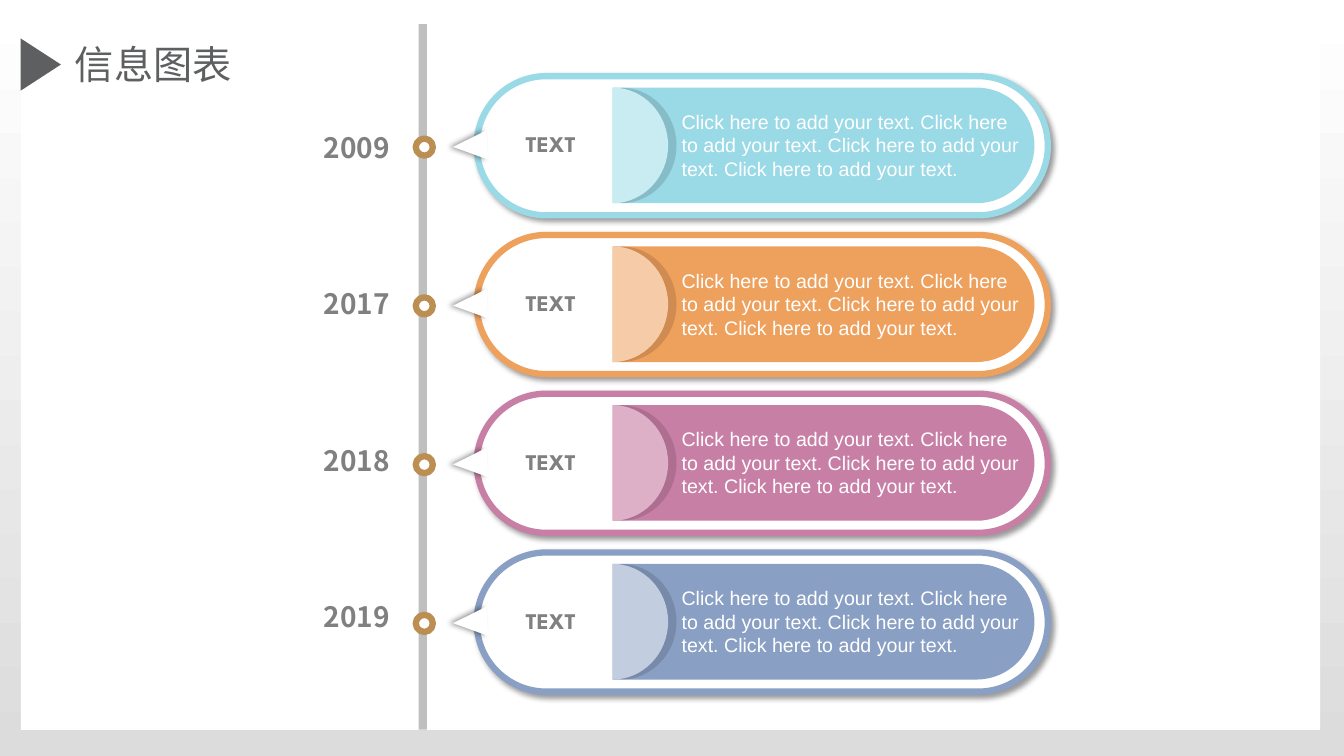
from lxml.etree import SubElement
from pptx import Presentation
from pptx.dml.color import RGBColor
from pptx.enum.shapes import MSO_SHAPE as SHAPE
from pptx.enum.text import MSO_ANCHOR as ANCHOR, MSO_AUTO_SIZE as AUTO, PP_ALIGN as ALIGN
from pptx.oxml.ns import qn
from pptx.util import Pt

WHITE = RGBColor(0xFF, 0xFF, 0xFF)
BACKDROP = RGBColor(0xDC, 0xDC, 0xDC)
SLATE = RGBColor(0x5D, 0x5F, 0x60)
GRAY = RGBColor(0x80, 0x80, 0x80)
SILVER = RGBColor(0xBF, 0xBF, 0xBF)
BRONZE = RGBColor(0xBB, 0x8E, 0x51)
AQUA = RGBColor(0x9A, 0xD9, 0xE6)
PALE_AQUA = RGBColor(0xC9, 0xEC, 0xF2)
ORANGE = RGBColor(0xEE, 0xA0, 0x5D)
PALE_ORANGE = RGBColor(0xF6, 0xCB, 0xA8)
PINK = RGBColor(0xC8, 0x7F, 0xA6)
PALE_PINK = RGBColor(0xDD, 0xB0, 0xC8)
BLUE = RGBColor(0x89, 0x9F, 0xC3)
PALE_BLUE = RGBColor(0xC2, 0xCE, 0xE0)

CJK_FONT = "Noto Sans CJK SC"
DETAIL = " ".join(["Click here to add your text."] * 4)
MILESTONES = [
    ("2009", AQUA, PALE_AQUA),
    ("2017", ORANGE, PALE_ORANGE),
    ("2018", PINK, PALE_PINK),
    ("2019", BLUE, PALE_BLUE),
]
CARD_PITCH = 113.4
YEAR_PITCH = 111.6
HALF_ROUND = [(0.55, -1), (1, -0.55), (1, 0), (1, 0.55), (0.55, 1), (0, 1)]


def paint(shape, fill, outline=None, shadow=None):
    shape.fill.solid()
    shape.fill.fore_color.rgb = fill
    if outline is None:
        shape.line.fill.background()
    else:
        shape.line.color.rgb = outline
        shape.line.width = Pt(4.5)
    shape.shadow.inherit = False
    if shadow:
        opacity, blur, distance, angle = shadow
        effects = shape.element.spPr.find(qn("a:effectLst"))
        outer = SubElement(effects, qn("a:outerShdw"), blurRad=str(Pt(blur)), dist=str(Pt(distance)),
                           dir=str(angle * 60000), algn="ctr", rotWithShape="0")
        black = SubElement(outer, qn("a:srgbClr"), val="000000")
        SubElement(black, qn("a:alpha"), val=str(opacity * 1000))


def add_label(shapes, text, box, font, size, color, bold=False, align=ALIGN.LEFT, spacing=None):
    frame = shapes.add_textbox(*map(Pt, box)).text_frame
    frame.word_wrap = True
    frame.auto_size = AUTO.SHAPE_TO_FIT_TEXT
    frame.text = text
    paragraph = frame.paragraphs[0]
    paragraph.alignment = align
    paragraph.line_spacing = spacing
    face = paragraph.runs[0].font
    face.name, face.size, face.bold = font, Pt(size), bold
    face.color.rgb = color


deck = Presentation()
deck.slide_width, deck.slide_height = Pt(960), Pt(540)
slide = deck.slides.add_slide(deck.slide_layouts[5])
shapes = slide.shapes

backdrop = slide.background.fill
backdrop.gradient()
backdrop.gradient_angle = 270
for stop, color, position in zip(backdrop.gradient_stops, (WHITE, BACKDROP), (0, 1)):
    stop.color.rgb = color
    stop.position = position

panel = shapes.add_shape(SHAPE.RECTANGLE, Pt(15), Pt(18), Pt(928), Pt(503.3))
paint(panel, WHITE)

title = shapes.title
title.element.addprevious(panel.element)
title.left, title.top, title.width, title.height = Pt(46.3), Pt(25.2), Pt(127), Pt(41)
title.text_frame.text = "信息图表"
title.text_frame.word_wrap = False
title.text_frame.auto_size = AUTO.NONE
title.text_frame.vertical_anchor = ANCHOR.TOP
title.text_frame.paragraphs[0].alignment = ALIGN.LEFT
title_run = title.text_frame.paragraphs[0].runs[0]
title_run.font.name, title_run.font.size = CJK_FONT, Pt(28)
title_run.font.color.rgb = SLATE
SubElement(title_run.font._element, qn("a:ea"), typeface=CJK_FONT)

title_marker = shapes.add_shape(SHAPE.ISOSCELES_TRIANGLE, Pt(10.4), Pt(31.7), Pt(37.4), Pt(28.8))
title_marker.rotation = 90
paint(title_marker, SLATE)

timeline = shapes.add_shape(SHAPE.RECTANGLE, Pt(299), Pt(17.3), Pt(6), Pt(504))
paint(timeline, SILVER)

for row, (year, color, pale) in enumerate(MILESTONES):
    top = 54.4 + row * CARD_PITCH
    card = shapes.add_group_shape().shapes

    capsule = card.add_shape(SHAPE.ROUNDED_RECTANGLE, Pt(340.5), Pt(top), Pt(408), Pt(99.4))
    capsule.adjustments[0] = 0.5
    paint(capsule, WHITE, color, (40, 4, 3, 45))

    left, middle, radius = 437.6, top + 49.5, 41.3
    corners = [(Pt(left), Pt(middle + radius)), (Pt(left), Pt(middle - radius))]
    for arc_left, arc_width, closing, fill, shadow in (
        (697.6, radius, corners, color, None),
        (left, 39.6, [], pale, (13, 0, 6, 0)),
    ):
        arc = [(Pt(arc_left + arc_width * x), Pt(middle + radius * y)) for x, y in HALF_ROUND]
        builder = card.build_freeform(Pt(arc_left), Pt(middle - radius))
        builder.add_line_segments(arc + closing)
        half_round = builder.convert_to_shape()
        segments = list(half_round.element.iter(qn("a:lnTo")))[:6]
        for curve_start in (segments[0], segments[3]):
            curve_start.addprevious(curve_start.makeelement(qn("a:cubicBezTo")))
        for index, segment in enumerate(segments):
            curve = segment.getprevious()
            curve.append(segment[0])
            segment.getparent().remove(segment)
        paint(half_round, fill, shadow=shadow)

    add_label(card, "TEXT", (349.9, top + 38.9, 87.1, 23), "League Spartan", 16, GRAY,
              True, ALIGN.CENTER, 0.8)

    pointer = card.add_shape(SHAPE.ISOSCELES_TRIANGLE, Pt(325.4), Pt(top + 37.6), Pt(20.9), Pt(24.5))
    pointer.rotation = 266.8
    paint(pointer, WHITE, shadow=(40, 4, 3, 180))

    add_label(shapes, DETAIL, (479.8, top + 20.4, 259.2, 58.3), "Arial", 14, WHITE)

    dot = shapes.add_shape(SHAPE.OVAL, Pt(297), Pt(top + 44.6), Pt(12.2), Pt(12.2))
    paint(dot, WHITE, BRONZE)

    add_label(shapes, year, (215.3, 94.4 + row * YEAR_PITCH, 79.2, 26.6), CJK_FONT, 20, GRAY,
              True, ALIGN.CENTER, 0.8)

deck.save("out.pptx")
